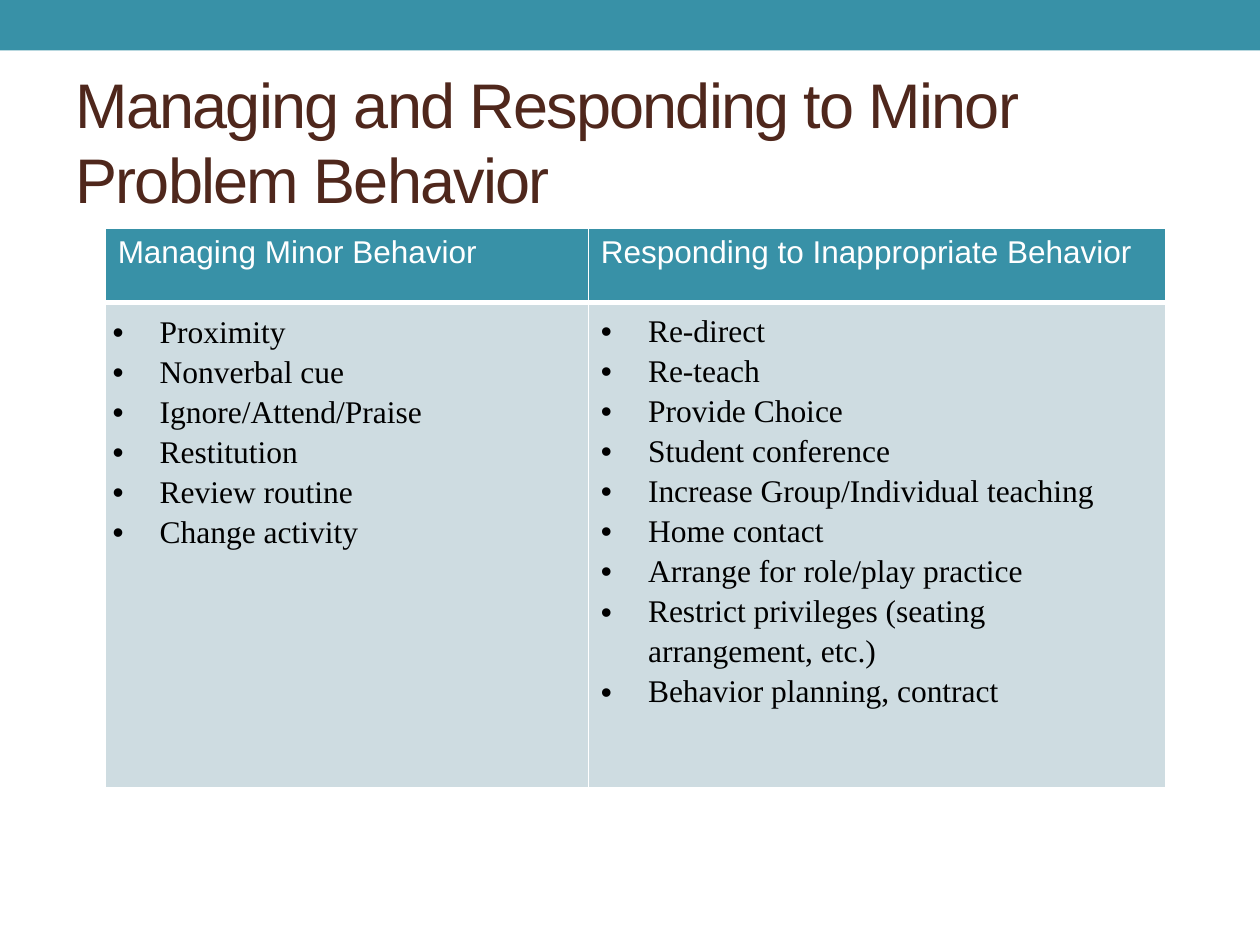
import pptx
import pptx.dml.color
import pptx.enum.shapes
import pptx.enum.text
import pptx.oxml.ns
import pptx.util
from lxml import etree

Cm = pptx.util.Cm
RGBColor = pptx.dml.color.RGBColor
TEAL = RGBColor(0x38, 0x91, 0xA7)
BROWN = RGBColor(0x4F, 0x27, 0x1C)
PALE = RGBColor(0xCE, 0xDC, 0xE1)
WHITE = RGBColor(0xFF, 0xFF, 0xFF)
BLACK = RGBColor(0, 0, 0)

HEADINGS = ["Managing Minor Behavior", "Responding to Inappropriate Behavior"]
STRATEGIES = [
    ["Proximity", "Nonverbal cue", "Ignore/Attend/Praise", "Restitution",
     "Review routine", "Change activity"],
    ["Re-direct", "Re-teach", "Provide Choice", "Student conference",
     "Increase Group/Individual teaching", "Home contact",
     "Arrange for role/play practice",
     "Restrict privileges (seating arrangement, etc.)",
     "Behavior planning, contract"],
]


def add_xml(parent, tag, **attributes):
    """Append a DrawingML element to the parent and return it."""
    return etree.SubElement(parent, pptx.oxml.ns.qn(tag), attributes)


def write_text(frame, lines, size=18, font="Arial", color=WHITE, spacing=None,
               line_spacing=None, bullet=None):
    """Write one paragraph per line in the given format."""
    frame.word_wrap = True
    for number, line in enumerate(lines):
        paragraph = frame.add_paragraph() if number else frame.paragraphs[0]
        run = paragraph.add_run()
        run.text = line
        run.font.size = pptx.util.Pt(size)
        run.font.name = font
        run.font.color.rgb = color
        if spacing is not None:
            run.font._element.set("spc", str(spacing * 100))
        if line_spacing:
            paragraph.line_spacing = line_spacing
        if bullet:
            properties = paragraph._p.get_or_add_pPr()
            properties.set("marL", str(Cm(0.95)))
            properties.set("indent", str(-Cm(0.95)))
            add_xml(properties, "a:buFont", typeface="Arial")
            add_xml(properties, "a:buChar", char=bullet)


def style_cell(cell, fill, top=1, bottom=1):
    """Fill a cell and draw its white borders, with widths in points."""
    cell.fill.solid()
    cell.fill.fore_color.rgb = fill
    properties = cell._tc.get_or_add_tcPr()
    borders = {"a:lnL": 1, "a:lnR": 1, "a:lnT": top, "a:lnB": bottom}
    for position, (tag, width) in enumerate(borders.items()):
        border = add_xml(properties, tag, w=str(pptx.util.Pt(width)))
        add_xml(add_xml(border, "a:solidFill"), "a:srgbClr", val=str(WHITE))
        properties.insert(position, border)


def add_top_band(slide, width):
    """Draw the teal band along the top edge."""
    band = slide.shapes.add_shape(
        pptx.enum.shapes.MSO_SHAPE.RECTANGLE, 0, 0, width, Cm(1.02))
    band.shadow.inherit = False
    band.fill.solid()
    band.fill.fore_color.rgb = TEAL
    band.line.fill.background()


def add_title(slide, title):
    """Place the slide title."""
    frame = slide.shapes.add_textbox(Cm(1.27), Cm(1.47), Cm(22.86), Cm(2.74)).text_frame
    frame.vertical_anchor = pptx.enum.text.MSO_ANCHOR.MIDDLE
    write_text(frame, [title], size=36, color=BROWN, spacing=-1)


def add_strategy_table(slide):
    """Place the two-column table of headings and strategies."""
    widths, heights = [Cm(9.74), Cm(11.64)], [Cm(1.5), Cm(9.78)]
    table = slide.shapes.add_table(
        2, 2, Cm(2.12), Cm(4.6), sum(widths), sum(heights)).table
    for row, height in zip(table.rows, heights):
        row.height = height
    for index, width in enumerate(widths):
        table.columns[index].width = width
        heading, body = table.cell(0, index), table.cell(1, index)
        write_text(heading.text_frame, [HEADINGS[index]])
        style_cell(heading, TEAL, bottom=3)
        write_text(body.text_frame, STRATEGIES[index], font="Times New Roman",
                   color=BLACK, line_spacing=1.15, bullet="•")
        style_cell(body, PALE, top=3)
    first_body = table.cell(1, 0)
    first_body.margin_left = first_body.margin_right = Cm(0.15)
    first_body.margin_top = first_body.margin_bottom = Cm(0.15)


def main():
    """Build and save the slide."""
    deck = pptx.Presentation()
    deck.slide_width, deck.slide_height = Cm(25.4), Cm(19.05)
    slide = deck.slides.add_slide(deck.slide_layouts[6])
    add_top_band(slide, deck.slide_width)
    add_title(slide, "Managing and Responding to Minor Problem Behavior")
    add_strategy_table(slide)
    deck.save("out.pptx")


if __name__ == "__main__":
    main()
